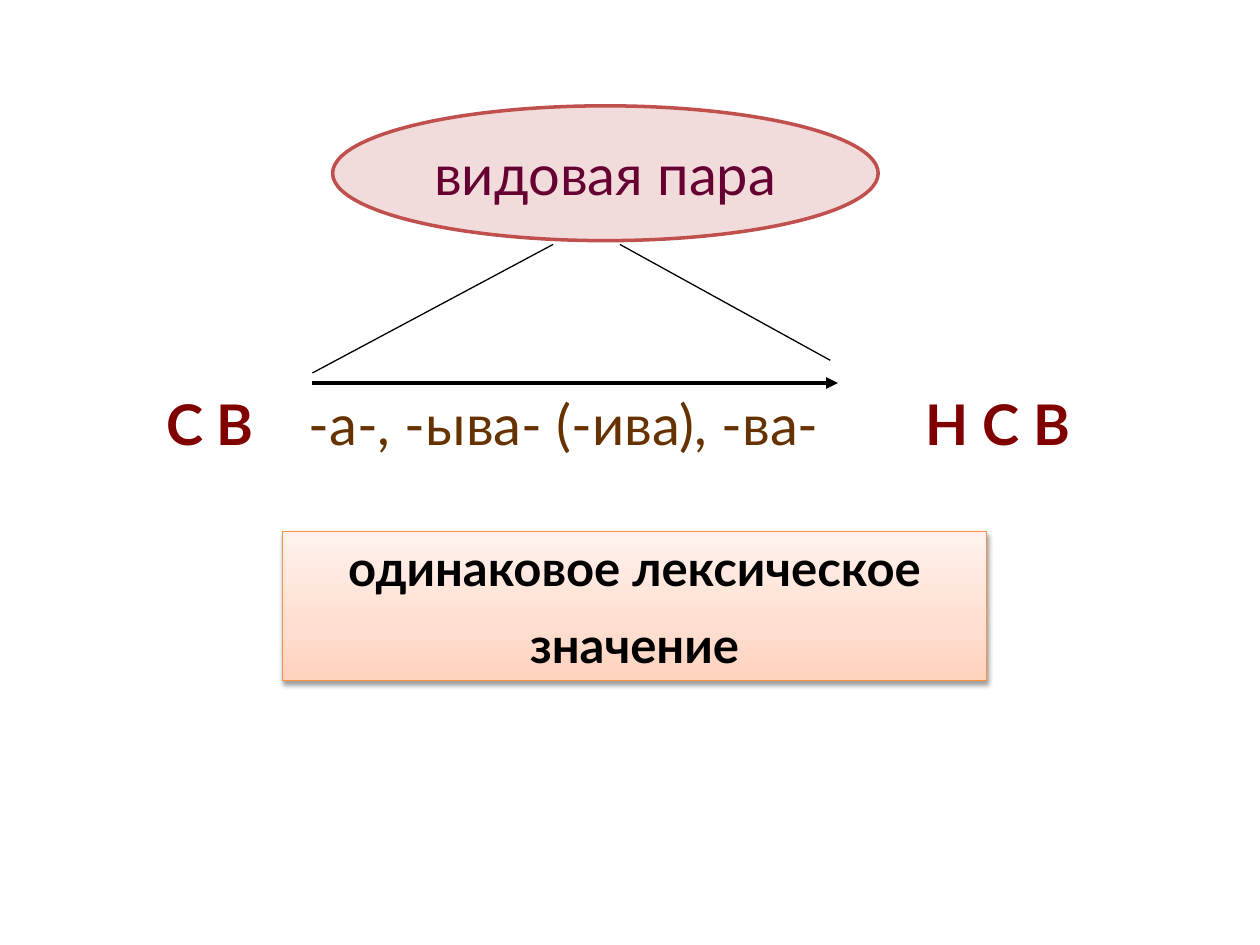
from dataclasses import dataclass

from lxml.etree import SubElement
from pptx import Presentation
from pptx.dml.color import RGBColor
from pptx.enum.shapes import MSO_CONNECTOR as Connector, MSO_SHAPE as Shape
from pptx.enum.text import MSO_ANCHOR as Anchor, PP_ALIGN as Align
from pptx.oxml.ns import qn
from pptx.util import Inches, Pt


@dataclass(frozen=True)
class Theme:
    font: str = "Lato"
    large: int = 32
    medium: int = 28
    black: str = "000000"
    aspect: str = "800000"
    suffix: str = "663300"
    pair: str = "660033"
    oval_fill: str = "F2DCDB"
    oval_line: str = "C0504D"
    panel_line: str = "F69240"
    panel_stops: tuple = ((0, "FFD2BD"), (35, "FFDED0"), (100, "FFF2ED"))


class AspectSlide:
    """Draws on a grid of 100 columns by 75 rows."""

    def __init__(self, deck, theme):
        self.theme = theme
        self.column = deck.slide_width / 100
        self.row = deck.slide_height / 75
        self.shapes = deck.slides.add_slide(deck.slide_layouts[6]).shapes

    def place(self, *grid):
        return [round(value * unit) for value, unit in zip(grid, (self.column, self.row) * 2)]

    def add_span(self, para, text, size, color, bold=False):
        span = para.add_run()
        span.text = text
        span.font.name = self.theme.font
        span.font.size = Pt(size)
        span.font.bold = bold
        span.font.color.rgb = RGBColor.from_string(color)

    def outline(self, shape, color, width):
        shape.line.color.rgb = RGBColor.from_string(color)
        shape.line.width = Pt(width)

    def line(self, start, end, width, arrow=False):
        line = self.shapes.add_connector(Connector.STRAIGHT, *self.place(*start, *end))
        self.outline(line, self.theme.black, width)
        if arrow:
            outline = line.element.spPr.find(qn("a:ln"))
            SubElement(outline, qn("a:tailEnd"), type="triangle")
        SubElement(line.element.spPr, qn("a:effectLst"))

    def row_text(self, area, parts, stops):
        box = self.shapes.add_textbox(*self.place(*area))
        box.text_frame.word_wrap = True
        para = box.text_frame.paragraphs[0]
        para.alignment = Align.LEFT
        tabs = SubElement(para._p.find(qn("a:pPr")), qn("a:tabLst"))
        for stop in stops:
            SubElement(tabs, qn("a:tab"), pos=str(round(stop * self.column)), algn="l")
        for text, color, bold in parts:
            self.add_span(para, text, self.theme.large, color, bold)

    def oval(self, area, text):
        oval = self.shapes.add_shape(Shape.OVAL, *self.place(*area))
        oval.shadow.inherit = False
        oval.fill.solid()
        oval.fill.fore_color.rgb = RGBColor.from_string(self.theme.oval_fill)
        self.outline(oval, self.theme.oval_line, 2)
        oval.text_frame.word_wrap = False
        oval.text_frame.vertical_anchor = Anchor.MIDDLE
        para = oval.text_frame.paragraphs[0]
        para.alignment = Align.CENTER
        self.add_span(para, text, self.theme.large, self.theme.pair)

    def panel(self, area, lines):
        panel = self.shapes.add_shape(Shape.RECTANGLE, *self.place(*area))
        panel.fill.gradient()
        panel.fill.gradient_angle = 90
        stops = panel.element.spPr.find(".//" + qn("a:gsLst"))
        for stop in list(stops):
            stops.remove(stop)
        for share, color in self.theme.panel_stops:
            stop = SubElement(stops, qn("a:gs"), pos=str(share * 1000))
            SubElement(stop, qn("a:srgbClr"), val=color)
        self.outline(panel, self.theme.panel_line, 0.75)
        self.drop_shadow(panel)
        frame = panel.text_frame
        frame.word_wrap = True
        frame.vertical_anchor = Anchor.TOP
        for index, text in enumerate(lines):
            para = frame.add_paragraph() if index else frame.paragraphs[0]
            para.alignment = Align.CENTER
            para.space_after = Pt(10)
            self.add_span(para, text, self.theme.medium, self.theme.black, True)

    def drop_shadow(self, shape):
        shape.shadow.inherit = False
        effects = shape.element.spPr.find(qn("a:effectLst"))
        shadow = SubElement(effects, qn("a:outerShdw"), blurRad=str(Pt(3.1)),
                            dist=str(Pt(1.6)), dir="5400000", rotWithShape="0")
        color = SubElement(shadow, qn("a:srgbClr"), val=self.theme.black)
        SubElement(color, qn("a:alpha"), val="38000")


def main():
    deck = Presentation()
    deck.slide_width, deck.slide_height = Inches(10), Inches(7.5)
    theme = Theme()
    slide = AspectSlide(deck, theme)

    # Perfective, suffixes, imperfective
    slide.row_text((12.2, 30.4, 78.3, 10.4), (
        ("С В\t", theme.aspect, True),
        ("-а-, -ыва- (-ива), -ва-\t", theme.suffix, False),
        ("Н С В", theme.aspect, True),
    ), stops=(11.3, 60.3))
    slide.line((24.8, 30.4), (66.5, 30.4), 2.25, arrow=True)

    # Aspect pair and its two branches
    slide.oval((26.4, 8.4, 43.3, 10.7), "видовая пара")
    slide.line((24.8, 29.6), (43.9, 19.4), 0.75)
    slide.line((49.2, 19.4), (65.9, 28.6), 0.75)

    # Shared meaning
    slide.panel((22.4, 42.2, 55.9, 11.8), ("одинаковое лексическое", "значение"))

    deck.save("out.pptx")


if __name__ == "__main__":
    main()
